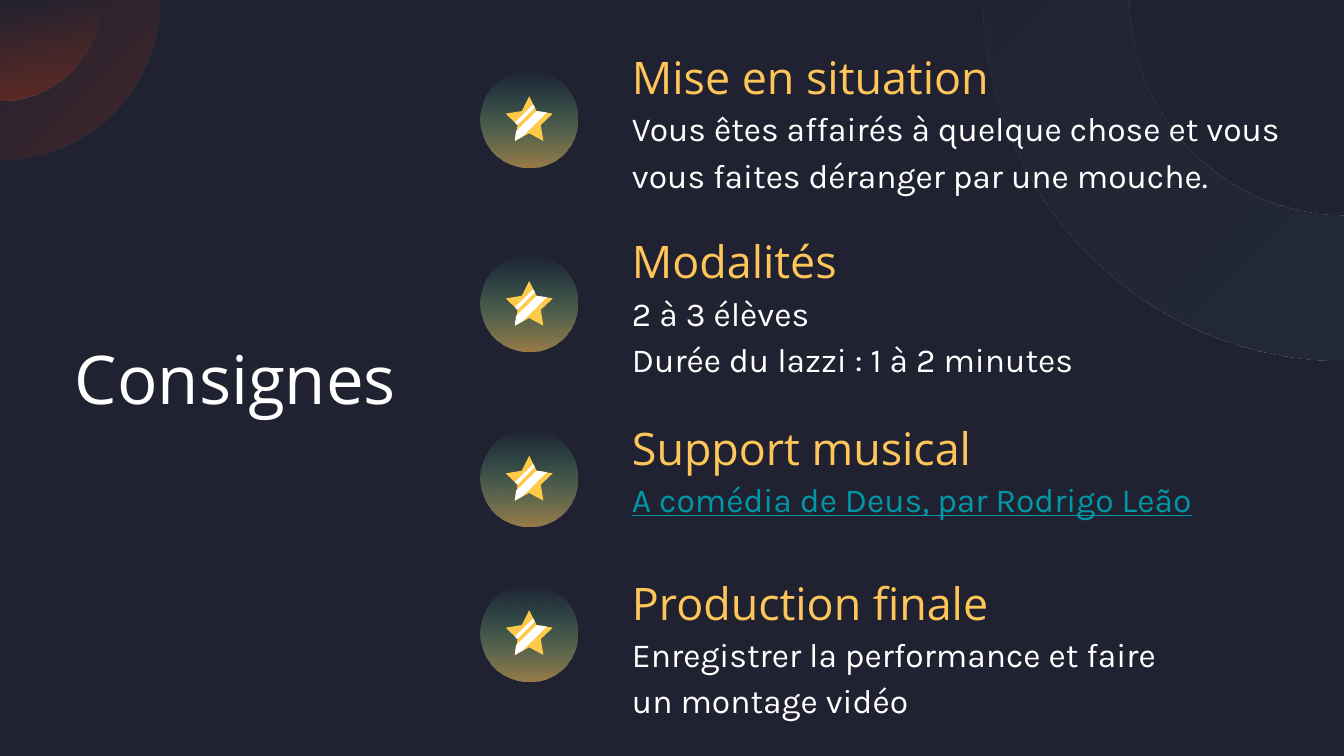
import math
from dataclasses import dataclass

import pptx
import pptx.dml.color
import pptx.enum.shapes
import pptx.enum.text
import pptx.util
from lxml import etree
from pptx.oxml.ns import qn

Pt = pptx.util.Pt
Point = tuple[float, float]

NIGHT, WHITE, GOLD, TEAL = "202231", "FFFFFF", "FEC659", "0097A7"
RUST, SLATE, MINT, STAR_GOLD = "9C3218", "252C3A", "4AFFC3", "FFC94A"


@dataclass
class Fade:
    """Two colours with their opacity in percent, from start to end."""
    start: str
    start_opacity: int
    end: str
    end_opacity: int
    angle: int  # counter-clockwise


@dataclass
class Instruction:
    heading: str
    lines: list[str]
    top: float
    badge_top: float
    body_width: float = 316
    body_color: str = WHITE
    underline: bool = False


INSTRUCTIONS = [
    Instruction("Mise en situation",
                ["Vous êtes affairés à quelque chose et vous vous faites déranger par une mouche."],
                15, 37.6, body_width=369.4),
    Instruction("Modalités", ["2 à 3 élèves", "Durée du lazzi : 1 à 2 minutes"], 113.8, 136.6),
    Instruction("Support musical", ["A comédia de Deus, par Rodrigo Leão"], 213.9, 230.3,
                body_color=TEAL, underline=True),
    Instruction("Production finale", ["Enregistrer la performance et faire un montage vidéo"],
                296.7, 313),
]

# Star outline and its two shine stripes, measured from the badge centre
STAR_RIGHT = [(0, -12.1), (4, -4.1), (12.6, -2.7), (6.2, 3.4), (7.6, 11.9), (0, 7.8)]
STAR = STAR_RIGHT + [(-x, y) for x, y in STAR_RIGHT[-2:0:-1]]
THIN_SHINE = [(2.2, -7.6), (-7.7, 2), (-6.4, 3.4), (3, -6)]
WIDE_SHINE = [(4, -4.1), (-7.1, 6.8), (-7.7, 11.9), (-3.6, 9.6), (9.5, -3.3)]
BADGE_LEFT, BADGE_SIZE = 257.5, 52
BADGE_FADE = Fade(GOLD, 55, MINT, 0, 90)
TEXT_LEFT, BODY_DROP = 331.5, 32.5


def rgb(color: str) -> pptx.dml.color.RGBColor:
    return pptx.dml.color.RGBColor.from_string(color)


def paint(shape, fill: str | Fade) -> None:
    shape.shadow.inherit = False
    shape.line.fill.background()
    if isinstance(fill, str):
        shape.fill.solid()
        shape.fill.fore_color.rgb = rgb(fill)
        return
    shape.fill.gradient()
    shape.fill.gradient_angle = fill.angle
    ends = [(fill.start, fill.start_opacity), (fill.end, fill.end_opacity)]
    for stop, (color, _) in zip(shape.fill.gradient_stops, ends):
        stop.color.rgb = rgb(color)
    stop_colors = shape._element.spPr.iter(qn("a:srgbClr"))
    for stop_color, (_, opacity) in zip(stop_colors, ends):
        etree.SubElement(stop_color, qn("a:alpha")).set("val", str(opacity * 1000))


def draw_outline(shapes, points: list[Point], fill: str | Fade) -> None:
    corners = [(Pt(x), Pt(y)) for x, y in points]
    builder = shapes.build_freeform(*corners[0])
    builder.add_line_segments(corners[1:])
    paint(builder.convert_to_shape(), fill)


def arc(center_x: float, radius: float, first: int, last: int, steps: int = 60) -> list[Point]:
    """Points along a circle centred on the top edge, angles in degrees."""
    angles = [math.radians(first + (last - first) * i / steps) for i in range(steps + 1)]
    return [(center_x + radius * math.cos(a), radius * math.sin(a)) for a in angles]


def draw_badge(shapes, top: float) -> None:
    badge = shapes.add_group_shape().shapes
    disc = badge.add_shape(pptx.enum.shapes.MSO_SHAPE.OVAL, Pt(BADGE_LEFT), Pt(top),
                           Pt(BADGE_SIZE), Pt(BADGE_SIZE))
    paint(disc, BADGE_FADE)
    center_x, center_y = BADGE_LEFT + BADGE_SIZE / 2, top + BADGE_SIZE / 2
    for points, fill in [(STAR, STAR_GOLD), (THIN_SHINE, WHITE), (WIDE_SHINE, WHITE)]:
        draw_outline(badge, [(center_x + x, center_y + y) for x, y in points], fill)


def draw_text(shapes, lines: list[str], box: tuple[float, float, float, float], color: str,
              font: dict, spacing: float = 1.15,
              anchor=pptx.enum.text.MSO_ANCHOR.TOP) -> None:
    frame = shapes.add_textbox(*map(Pt, box)).text_frame
    frame.word_wrap = True
    frame.vertical_anchor = anchor
    for side in ("left", "top", "right", "bottom"):
        setattr(frame, f"margin_{side}", Pt(7.2))
    for index, line in enumerate(lines):
        paragraph = frame.add_paragraph() if index else frame.paragraphs[0]
        paragraph.line_spacing = spacing
        run = paragraph.add_run()
        run.text = line
        run.font.color.rgb = rgb(color)
        for attribute, value in font.items():
            setattr(run.font, attribute, value)


def main() -> None:
    presentation = pptx.Presentation()
    presentation.slide_width, presentation.slide_height = Pt(720), Pt(405)
    slide = presentation.slides.add_slide(presentation.slide_layouts[6])
    slide.background.fill.solid()
    slide.background.fill.fore_color.rgb = rgb(NIGHT)
    shapes = slide.shapes

    # Corner decorations
    draw_outline(shapes, [(0, 0)] + arc(0, 85.5, 0, 90), Fade(RUST, 30, RUST, 0, 135))
    draw_outline(shapes, [(0, 0)] + arc(0, 53.8, 0, 90), Fade(RUST, 42, RUST, 0, 90))
    draw_outline(shapes, arc(720, 193, 180, 90) + arc(720, 115.2, 90, 180),
                 Fade(SLATE, 75, SLATE, 20, 135))

    # Title
    draw_text(shapes, ["Consignes"], (33.1, 149.8, 235.4, 105.1), WHITE,
              {"name": "Open Sans", "size": Pt(36)}, spacing=1.0,
              anchor=pptx.enum.text.MSO_ANCHOR.MIDDLE)

    # Instructions
    for item in INSTRUCTIONS:
        draw_badge(shapes, item.badge_top)
        draw_text(shapes, [item.heading], (TEXT_LEFT, item.top, 288, 45.4), GOLD,
                  {"name": "Open Sans", "size": Pt(24)})
        draw_text(shapes, item.lines, (TEXT_LEFT, item.top + BODY_DROP, item.body_width, 59.8),
                  item.body_color,
                  {"name": "Karla", "size": Pt(18), "underline": item.underline})

    presentation.save("out.pptx")


if __name__ == "__main__":
    main()
